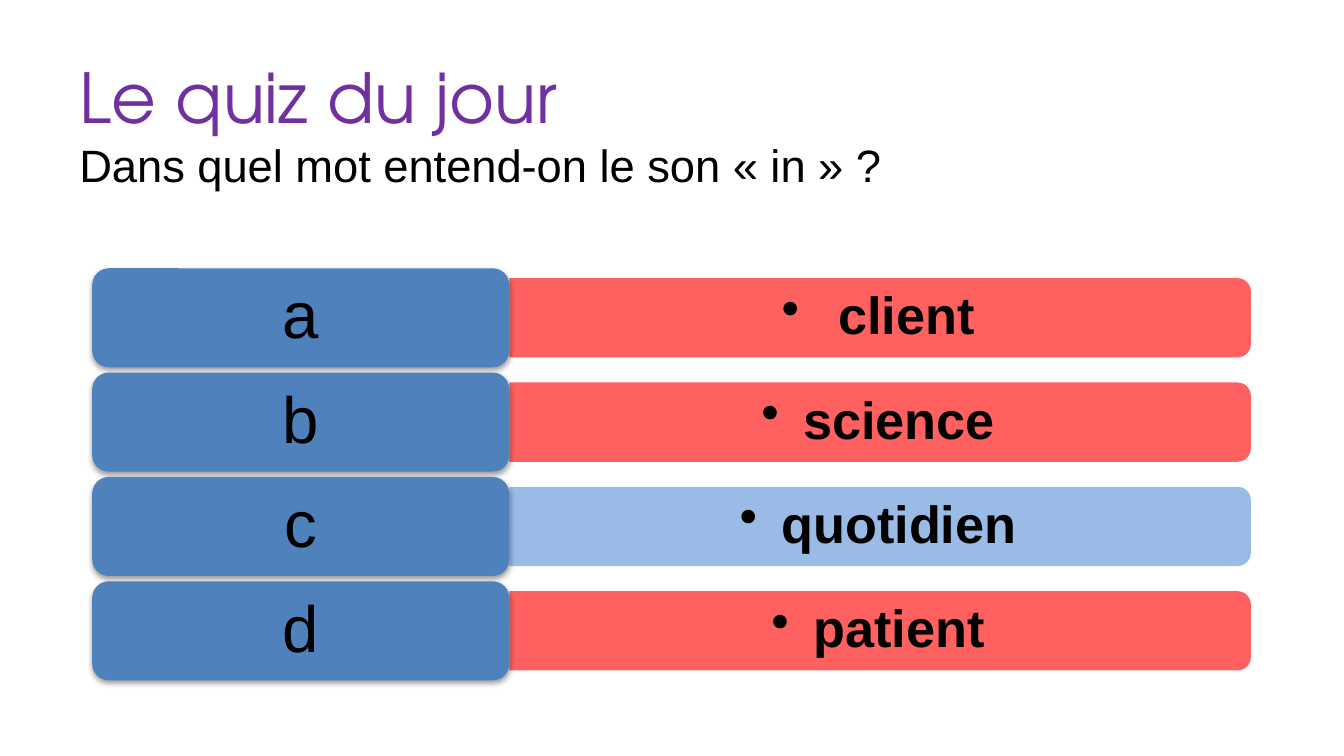
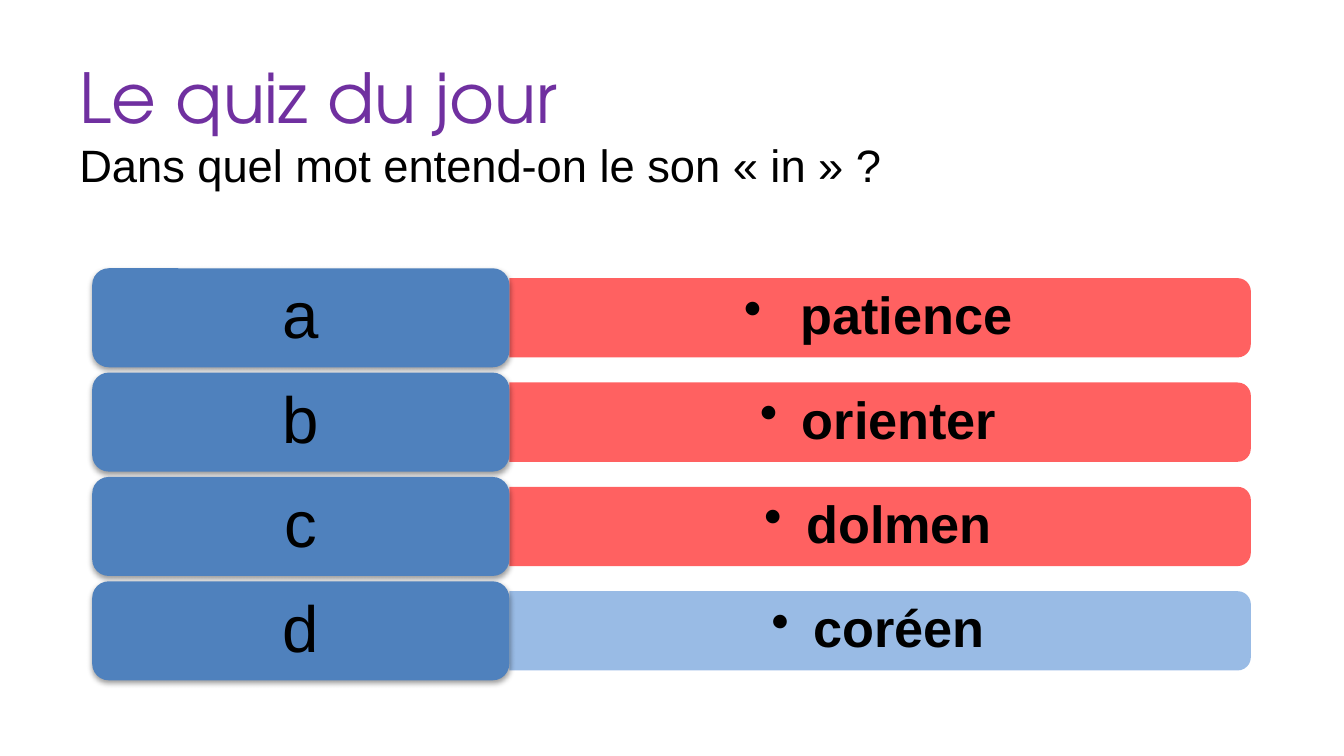
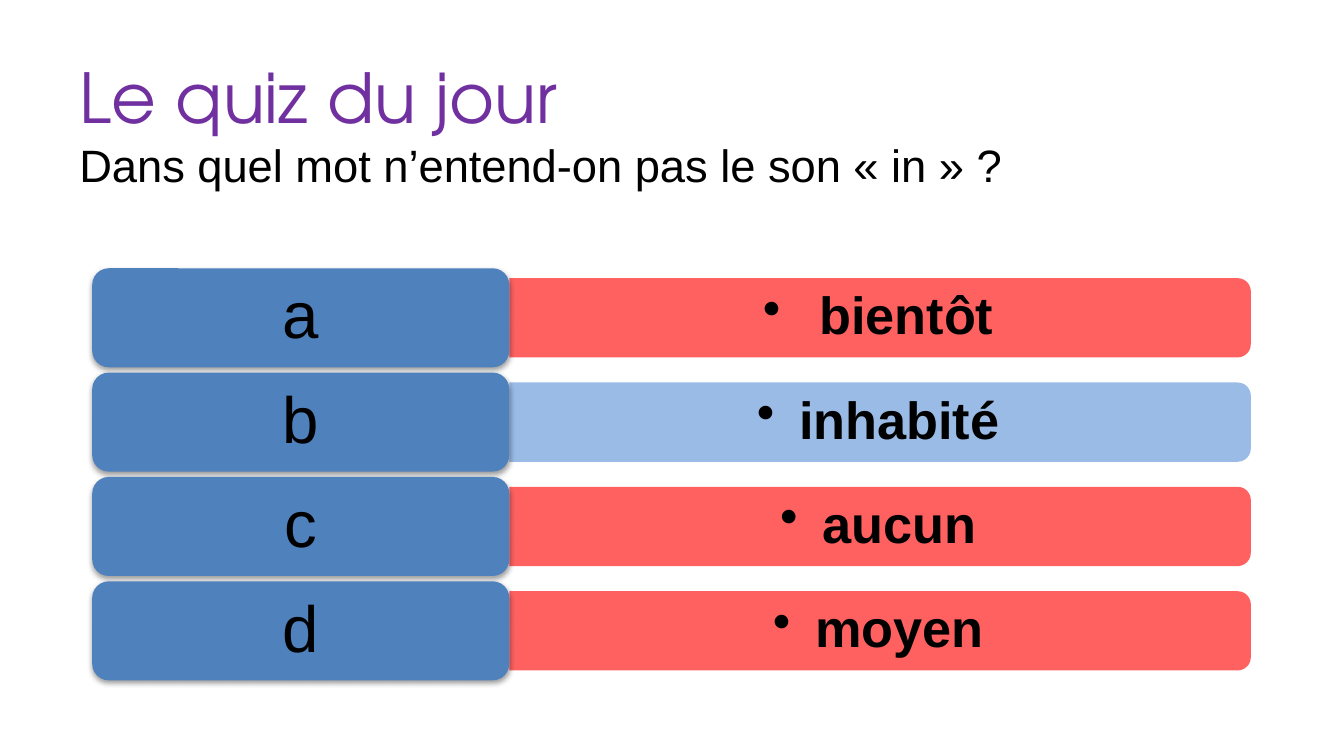
from copy import deepcopy
from dataclasses import dataclass
from typing import NamedTuple

from lxml.etree import SubElement
from pptx import Presentation
from pptx.dml.color import RGBColor
from pptx.enum.shapes import MSO_SHAPE as Preset
from pptx.enum.text import MSO_ANCHOR as Anchor, MSO_AUTO_SIZE as AutoSize, PP_ALIGN as Align
from pptx.oxml.ns import qn
from pptx.util import Emu, Pt

PX = 3048


@dataclass(frozen=True)
class Theme:
    heading_font: str = "TeX Gyre Adventor"
    text_font: str = "Arial"
    heading: str = "7030A0"
    ink: str = "000000"
    letter_fill: str = "4F81BD"
    wrong: str = "FF5050"
    right: str = "8EB4E3"
    heading_size: float = 36.9
    question_size: float = 24.3
    answer_size: float = 28
    letter_size: float = 35


THEME = Theme()


class Box(NamedTuple):
    left: int
    top: int
    width: int
    height: int

    def emu(self) -> list[Emu]:
        return [Emu(length * PX) for length in self]

    def shifted(self, down: int) -> "Box":
        return self._replace(top=self.top + down)

    def upright(self) -> "Box":
        shift = (self.width - self.height) // 2
        return Box(self.left + shift, self.top - shift, self.height, self.width)


class Quiz(NamedTuple):
    question: str
    answers: tuple[str, ...]
    solution: str


SLIDE_WIDTH, SLIDE_HEIGHT = 3000, 1688
HEADER = Box(177, 111, 2586, 327)
LETTER_CARD = Box(206, 599, 931, 221)
LETTER_TEXT = Box(217, 610, 909, 199)
ANSWER_BAR = Box(1137, 621, 1655, 177)
ANSWER_TEXT = Box(1137, 630, 1646, 159)
ROW_PITCH = 233
BULLET_INDENT = 94

HEADING = "Le quiz du jour"
QUESTION = "Dans quel mot entend-on le son « in » ?"
QUIZZES = (
    Quiz(QUESTION, (" client", "science", "quotidien", "patient"), "c"),
    Quiz(QUESTION, (" patience", "orienter", "dolmen", "coréen"), "d"),
    Quiz("Dans quel mot n’entend-on pas le son « in » ?",
         (" bientôt", "inhabité", "aucun", "moyen"), "b"),
)


def write(paragraph, text: str, *, size: float, font: str = THEME.text_font,
          color: str = THEME.ink, bold: bool = False):
    run = paragraph.add_run()
    run.text = text
    run.font.name = font
    run.font.size = Pt(size)
    run.font.bold = bold
    run.font.color.rgb = RGBColor.from_string(color)
    return run


def set_frame(frame, margin_x: int = 0, margin_y: int = 0) -> None:
    frame.word_wrap = True
    frame.auto_size = AutoSize.NONE
    frame.vertical_anchor = Anchor.MIDDLE
    frame.margin_left = frame.margin_right = Emu(margin_x * PX)
    frame.margin_top = frame.margin_bottom = Emu(margin_y * PX)


def add_label(group, box: Box, margin_x: int, margin_y: int, space_after: int):
    frame = group.shapes.add_textbox(*box.emu()).text_frame
    set_frame(frame, margin_x, margin_y)
    paragraph = frame.paragraphs[0]
    paragraph.alignment = Align.CENTER
    paragraph.line_spacing = 0.9
    spacing = SubElement(paragraph._p.get_or_add_pPr(), qn("a:spcAft"))
    SubElement(spacing, qn("a:spcPct"), val=str(space_after * 1000))
    return paragraph


def add_bullet(paragraph) -> None:
    paragraph.level = 1
    properties = paragraph._p.get_or_add_pPr()
    properties.set("marL", str(BULLET_INDENT * PX))
    properties.set("indent", str(-BULLET_INDENT * PX))
    SubElement(properties, qn("a:buChar"), char="•")


def add_panel(group, preset: Preset, box: Box, color: str):
    panel = group.shapes.add_shape(preset, *box.emu())
    panel.shadow.inherit = False
    panel.fill.solid()
    panel.fill.fore_color.rgb = RGBColor.from_string(color)
    panel.line.fill.background()
    return panel


def add_answer(group, answer: str, color: str, down: int) -> None:
    bar = add_panel(group, Preset.ROUND_2_SAME_RECTANGLE,
                    ANSWER_BAR.shifted(down).upright(), color)
    bar.rotation = 90
    tint = bar.element.spPr.find(qn("a:solidFill"))[0]
    SubElement(tint, qn("a:alpha"), val="90000")
    paragraph = add_label(group, ANSWER_TEXT.shifted(down), 36, 18, 15)
    add_bullet(paragraph)
    write(paragraph, answer, size=THEME.answer_size, bold=True)


def add_letter(group, letter: str, down: int) -> None:
    card = add_panel(group, Preset.ROUNDED_RECTANGLE,
                     LETTER_CARD.shifted(down), THEME.letter_fill)
    effects = card.element.spPr.find(qn("a:effectLst"))
    shadow = SubElement(effects, qn("a:outerShdw"), blurRad=str(Pt(3.1)),
                        dist=str(Pt(1.6)), dir="5400000", rotWithShape="0")
    shade = SubElement(shadow, qn("a:srgbClr"), val=THEME.ink)
    SubElement(shade, qn("a:alpha"), val="38000")
    paragraph = add_label(group, LETTER_TEXT.shifted(down), 44, 22, 35)
    write(paragraph, letter, size=THEME.letter_size)


def add_header(slide, question: str) -> None:
    header = slide.shapes.title
    header.left, header.top, header.width, header.height = HEADER.emu()
    set_frame(header.text_frame)
    paragraph = header.text_frame.paragraphs[0]
    paragraph.alignment = Align.LEFT
    heading = write(paragraph, HEADING, size=THEME.heading_size,
                    font=THEME.heading_font, color=THEME.heading)
    paragraph.add_line_break()
    paragraph._p[-1].append(deepcopy(heading.font._element))
    write(paragraph, question, size=THEME.question_size)


def add_quiz(deck, quiz: Quiz) -> None:
    slide = deck.slides.add_slide(deck.slide_layouts.get_by_name("Title Only"))
    add_header(slide, quiz.question)
    choices = slide.shapes.add_group_shape()
    for row, (letter, answer) in enumerate(zip("abcd", quiz.answers)):
        color = THEME.right if letter == quiz.solution else THEME.wrong
        add_answer(choices, answer, color, row * ROW_PITCH)
        add_letter(choices, letter, row * ROW_PITCH)


def main() -> None:
    deck = Presentation()
    deck.slide_width = Emu(SLIDE_WIDTH * PX)
    deck.slide_height = Emu(SLIDE_HEIGHT * PX)
    for quiz in QUIZZES:
        add_quiz(deck, quiz)
    deck.save("out.pptx")


if __name__ == "__main__":
    main()
